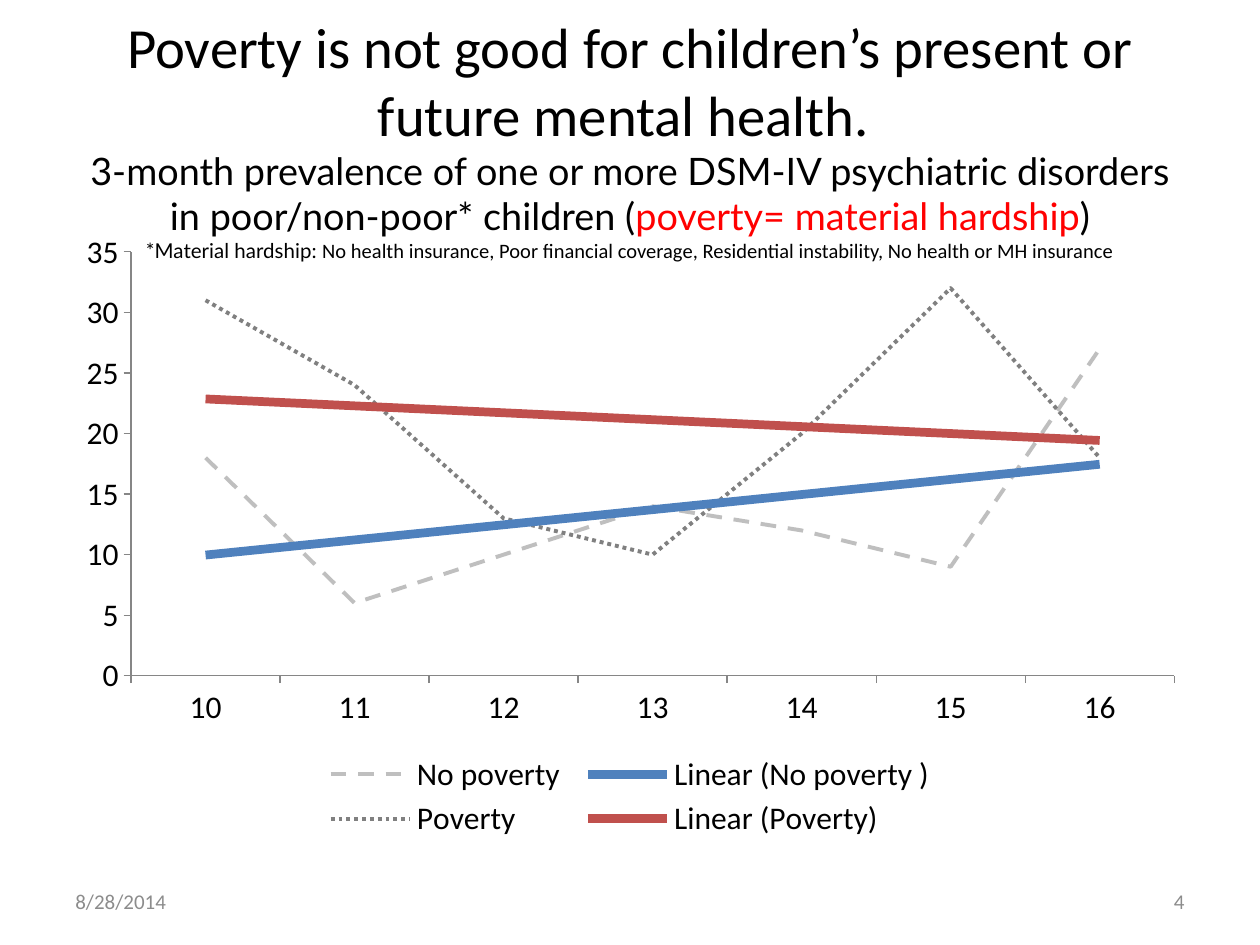
from lxml import etree
from pptx import Presentation
from pptx.chart.data import CategoryChartData
from pptx.dml.color import RGBColor
from pptx.enum.chart import XL_CHART_TYPE, XL_LEGEND_POSITION, XL_MARKER_STYLE, XL_TICK_MARK
from pptx.enum.dml import MSO_LINE
from pptx.enum.text import MSO_ANCHOR, PP_ALIGN
from pptx.oxml import parse_xml
from pptx.util import Cm, Pt

LINE_CHART = XL_CHART_TYPE.LINE
LEGEND_BOTTOM = XL_LEGEND_POSITION.BOTTOM
NO_MARKER = XL_MARKER_STYLE.NONE
TICK_OUT = XL_TICK_MARK.OUTSIDE
DASH, DOT = MSO_LINE.DASH, MSO_LINE.ROUND_DOT
MIDDLE = MSO_ANCHOR.MIDDLE
LEFT, CENTER, RIGHT = PP_ALIGN.LEFT, PP_ALIGN.CENTER, PP_ALIGN.RIGHT

BLACK = RGBColor(0x00, 0x00, 0x00)
RED = RGBColor(0xFF, 0x00, 0x00)
FOOTER_GREY = RGBColor(0x8C, 0x8C, 0x8C)
AXIS_GREY = RGBColor(0x86, 0x86, 0x86)
LIGHT_GREY = RGBColor(0xBF, 0xBF, 0xBF)
MID_GREY = RGBColor(0x80, 0x80, 0x80)
BLUE = RGBColor(0x4F, 0x81, 0xBD)
BRICK = RGBColor(0xC0, 0x50, 0x4D)

CHART_NS = "http://schemas.openxmlformats.org/drawingml/2006/chart"
DRAWING_NS = "http://schemas.openxmlformats.org/drawingml/2006/main"


def add_text(left, top, width, height, align, runs):
    frame = slide.shapes.add_textbox(Cm(left), Cm(top), Cm(width), Cm(height)).text_frame
    frame.word_wrap = True
    frame.vertical_anchor = MIDDLE
    paragraph = frame.paragraphs[0]
    paragraph.alignment = align
    for text, size, font_name, color in runs:
        if text == "\n":
            paragraph.add_line_break()
            continue
        run = paragraph.add_run()
        run.text = text
        run.font.size = Pt(size)
        run.font.name = font_name
        run.font.color.rgb = color
    return frame


prs = Presentation()
prs.slide_width, prs.slide_height = Cm(25.4), Cm(19.05)
slide = prs.slides.add_slide(prs.slide_layouts[6])

line_break = ("\n", None, None, None)
heading = add_text(1.27, 0.76, 22.86, 4.52, CENTER, [
    ("Poverty is not good for children’s present or future mental health. ", 32.4, "Calibri", BLACK),
    line_break,
    ("3-month prevalence of one or more DSM-IV psychiatric disorders in poor/non-poor* children (",
     21.6, "Lato", BLACK),
    ("poverty= material hardship", 21.6, "Lato", RED),
    (")", 21.6, "Lato", BLACK),
    line_break,
    ("*Material hardship: ", 11.7, "Lato", BLACK),
    ("No health insurance, Poor financial coverage, Residential instability, No health or MH insurance",
     11.7, "Calibri", BLACK),
])
heading.margin_bottom = Cm(0.63)

prevalence = [
    ("No poverty ", (18, 6, 10, 14, 12, 9, 27), LIGHT_GREY, DASH, BLUE),
    ("Poverty", (31, 24, 13, 10, 20, 32, 18), MID_GREY, DOT, BRICK),
]
chart_data = CategoryChartData()
chart_data.categories = [str(age) for age in range(10, 17)]
for group, rates, *_ in prevalence:
    chart_data.add_series(group, rates)

chart = slide.shapes.add_chart(
    LINE_CHART, Cm(1.27), Cm(4.45), Cm(22.86), Cm(12.57), chart_data).chart
for attribute, value in {"size": Pt(18), "name": "Calibri"}.items():
    setattr(chart.font, attribute, value)
chart.font.color.rgb = BLACK
chart.has_title = False
chart.has_legend = True
chart.legend.position = LEGEND_BOTTOM
chart.legend.include_in_layout = False
chart.plots[0].vary_by_categories = False

axis_format = {"has_major_gridlines": False, "major_tick_mark": TICK_OUT}
value_format = {"minimum_scale": 0, "maximum_scale": 35, "major_unit": 5}
for axis, extra in ((chart.category_axis, {}), (chart.value_axis, value_format)):
    for attribute, value in {**axis_format, **extra}.items():
        setattr(axis, attribute, value)
    axis.format.line.color.rgb = AXIS_GREY
    axis.format.line.width = Pt(0.75)

for series, (_, _, color, dash, trend_color) in zip(chart.plots[0].series, prevalence):
    series.smooth = False
    series.marker.style = NO_MARKER
    line = series.format.line
    line.color.rgb = color
    for attribute, value in {"width": Pt(2.25), "dash_style": dash}.items():
        setattr(line, attribute, value)
    trend = parse_xml(
        f'<c:trendline xmlns:c="{CHART_NS}" xmlns:a="{DRAWING_NS}">'
        f'<c:spPr><a:ln w="{Pt(5)}"><a:solidFill><a:srgbClr val="{trend_color}"/></a:solidFill></a:ln></c:spPr>'
        '<c:trendlineType val="linear"/><c:dispRSqr val="0"/><c:dispEq val="0"/></c:trendline>')
    series._element.find(f"{{{CHART_NS}}}cat").addprevious(trend)

plot_area = chart._chartSpace.chart.plotArea
for old_layout in plot_area.findall(f"{{{CHART_NS}}}layout"):
    plot_area.remove(old_layout)
layout = etree.Element(f"{{{CHART_NS}}}layout")
manual = etree.SubElement(layout, f"{{{CHART_NS}}}manualLayout")
for tag, value in {"layoutTarget": "inner", "xMode": "edge", "yMode": "edge",
                   "x": "0.06", "y": "0.05", "w": "0.92", "h": "0.68"}.items():
    etree.SubElement(manual, f"{{{CHART_NS}}}{tag}").set("val", value)
plot_area.insert(0, layout)

for text, left, align in (("8/28/2014", 1.27, LEFT), ("4", 18.21, RIGHT)):
    add_text(left, 17.65, 5.92, 1.02, align, [(text, 12, "Calibri", FOOTER_GREY)])

prs.save("out.pptx")
